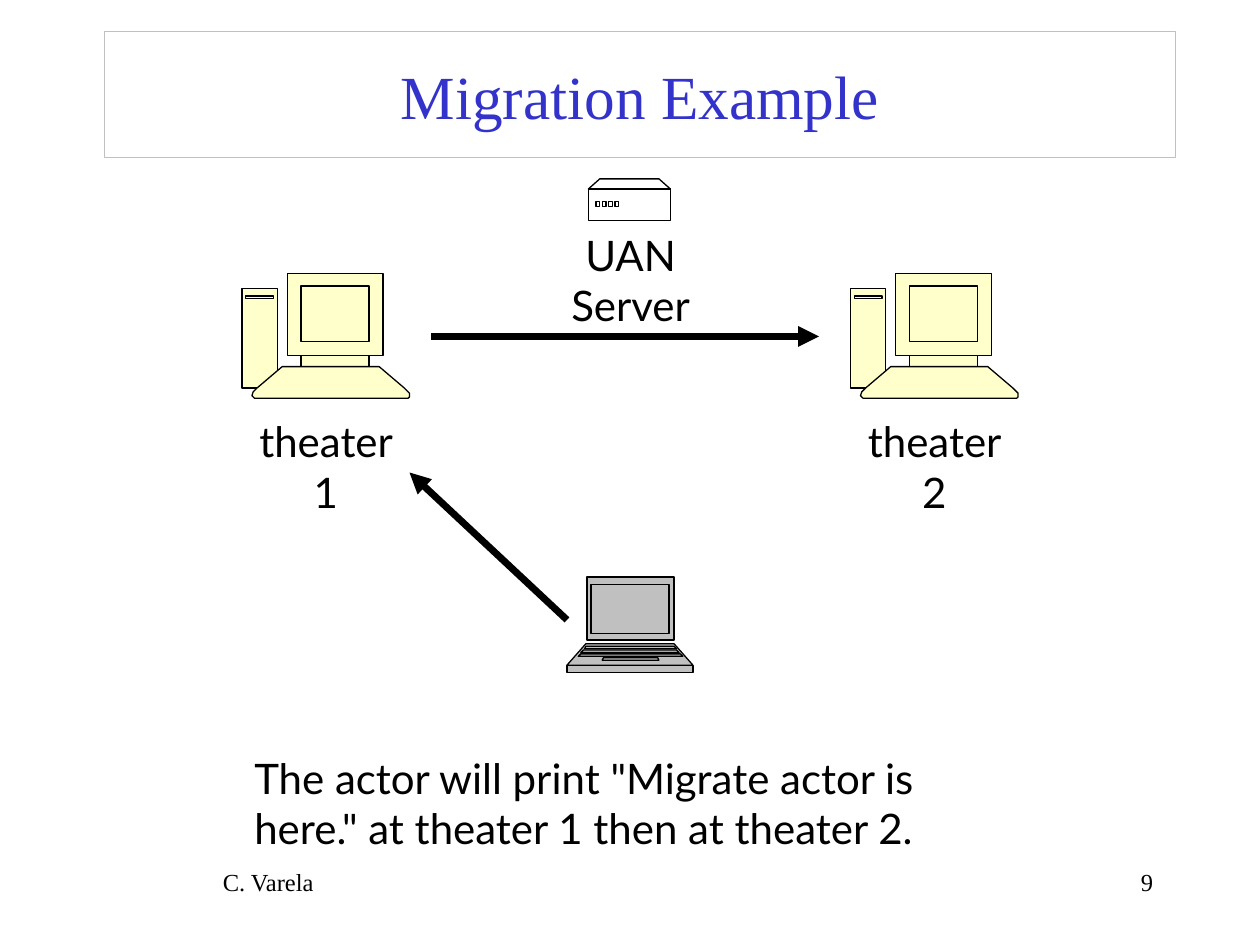
from lxml.etree import SubElement
from pptx import Presentation
from pptx.dml.color import RGBColor
from pptx.enum.shapes import MSO_CONNECTOR
from pptx.enum.text import MSO_ANCHOR, MSO_AUTO_SIZE, PP_ALIGN
from pptx.oxml.ns import qn
from pptx.util import Inches, Pt

BLACK = RGBColor(0x00, 0x00, 0x00)
WHITE = RGBColor(0xFF, 0xFF, 0xFF)
SILVER = RGBColor(0xC0, 0xC0, 0xC0)
CREAM = RGBColor(0xFF, 0xFF, 0xCC)
BLUE = RGBColor(0x33, 0x33, 0xCC)
SERIF, SANS = "Times New Roman", "Lato"

TITLE = "Migration Example"
CAPTION = 'The actor will print "Migrate actor is here." at theater 1 then at theater 2.'
THEATERS = [("theater 1", 1.92), ("theater 2", 6.75)]
THEATER_TOP, THEATER_WIDTH, LABEL_DROP = 2.17, 1.33, 1.08
ARROWS = [((4.5, 4.92), (3.25, 3.75)), ((3.42, 2.67), (6.5, 2.67))]
# text, left, top, width, height, alignment, font format
TEXTS = [
    ("C. Varela", 1.67, 6.83, 6.67, 0.5, PP_ALIGN.LEFT, (SERIF, 14)),
    ("9", 7.17, 6.83, 2.08, 0.5, PP_ALIGN.RIGHT, (SERIF, 14)),
    (CAPTION, 1.92, 5.92, 6.17, 0.9, PP_ALIGN.LEFT, (SANS, 24)),
    ("UAN Server", 4.17, 1.77, 1.67, 0.9, PP_ALIGN.CENTER, (SANS, 24)),
]


def box(left, top, right, bottom):
    return [(left, top), (right, top), (right, bottom), (left, bottom)]


def trapezoid(top_left, top_right, top, bottom_left, bottom_right, bottom):
    return [(top_left, top), (top_right, top), (bottom_right, bottom), (bottom_left, bottom)]


# Outlines in hundredths of an inch from each icon's top left corner, back to front
COMPUTER = [
    box(0, 12, 28, 91),    # tower
    box(36, 0, 112, 65),   # monitor
    box(47, 65, 101, 74),  # stand
    [(32, 74), (109, 74), (129, 91), (133, 95), (133, 98), (132, 99),
     (10, 99), (8, 97), (9, 94), (12, 91)],  # keyboard
    box(47, 10, 101, 54),  # screen
    box(3, 18, 25, 20),    # drive slot
]
LAPTOP = [
    box(16, 0, 85, 50),
    trapezoid(15, 85, 53, 0, 100, 70),
    box(0, 70, 100, 76),
    box(19, 6, 81, 45),
    trapezoid(15, 85, 55, 14, 87, 57),
    trapezoid(29, 72, 64, 28, 73, 66),
    trapezoid(13, 87, 58, 11, 89, 60),
    trapezoid(11, 90, 61, 9, 92, 63),
]
SERVER = [
    trapezoid(9, 56, 0, 0, 65, 8),
    box(0, 8, 65, 33),
    *[box(left, 18, left + 3, 22) for left in range(6, 22, 5)],
]


def set_font(font, name, size, color=BLACK):
    for key, value in {"name": name, "size": Pt(size)}.items():
        setattr(font, key, value)
    font.color.rgb = color


def add_text(shapes, text, left, top, width, height, align, font):
    frame = shapes.add_textbox(*map(Inches, (left, top, width, height))).text_frame
    frame.word_wrap = True
    frame.auto_size = MSO_AUTO_SIZE.NONE if font[0] == SERIF else MSO_AUTO_SIZE.SHAPE_TO_FIT_TEXT
    frame.text = text
    frame.paragraphs[0].alignment = align
    set_font(frame.paragraphs[0].runs[0].font, *font)


def add_icon(shapes, outlines, left, top, fill):
    """Draw the outlines as one freeform, each filled on its own."""
    builder = shapes.build_freeform(*outlines[0][0], scale=Inches(0.01))
    for number, (start, *rest) in enumerate(outlines):
        if number:
            builder.move_to(*start)
        builder.add_line_segments(rest, close=True)
    icon = builder.convert_to_shape(Inches(left), Inches(top))
    icon.shadow.inherit = False
    icon.fill.solid()
    icon.fill.fore_color.rgb = fill
    icon.line.color.rgb = BLACK
    icon.line.width = Pt(0.75)

    # Overlaps in a single path would become holes
    joined = next(icon.element.iter(qn("a:path")))
    path_list = joined.getparent()
    for step in list(joined):
        if step.tag == qn("a:moveTo"):
            outline = SubElement(path_list, qn("a:path"), dict(joined.attrib))
        outline.append(step)
    path_list.remove(joined)


def add_arrow(shapes, start, end):
    arrow = shapes.add_connector(MSO_CONNECTOR.STRAIGHT, *map(Inches, start + end))
    arrow.line.color.rgb = BLACK
    arrow.line.width = Pt(4)
    SubElement(arrow.line._get_or_add_ln(), qn("a:tailEnd"), type="triangle")
    SubElement(arrow.element.spPr, qn("a:effectLst"))


def add_title(slide):
    title = slide.shapes.title
    for key, value in {"left": 0.83, "top": 0.25, "width": 8.5, "height": 1}.items():
        setattr(title, key, Inches(value))
    title.line.color.rgb = SILVER
    title.line.width = Pt(0.75)
    title.text_frame.text = TITLE
    title.text_frame.vertical_anchor = MSO_ANCHOR.MIDDLE
    heading = title.text_frame.paragraphs[0]
    heading.alignment = PP_ALIGN.CENTER
    set_font(heading.runs[0].font, SERIF, 35, BLUE)


def main():
    deck = Presentation()
    deck.slide_width, deck.slide_height = Inches(10), Inches(7.5)
    slide = deck.slides.add_slide(deck.slide_layouts[5])
    shapes = slide.shapes
    add_title(slide)
    add_icon(shapes, LAPTOP, 4.5, 4.58, SILVER)
    for label, left in THEATERS:
        theater = shapes.add_group_shape().shapes
        add_icon(theater, COMPUTER, left, THEATER_TOP, CREAM)
        add_text(theater, label, left, THEATER_TOP + LABEL_DROP, THEATER_WIDTH, 0.9,
                 PP_ALIGN.CENTER, (SANS, 24))
    for start, end in ARROWS:
        add_arrow(shapes, start, end)
    add_icon(shapes, SERVER, 4.67, 1.42, WHITE)
    for text in TEXTS:
        add_text(shapes, *text)
    deck.save("out.pptx")


if __name__ == "__main__":
    main()
